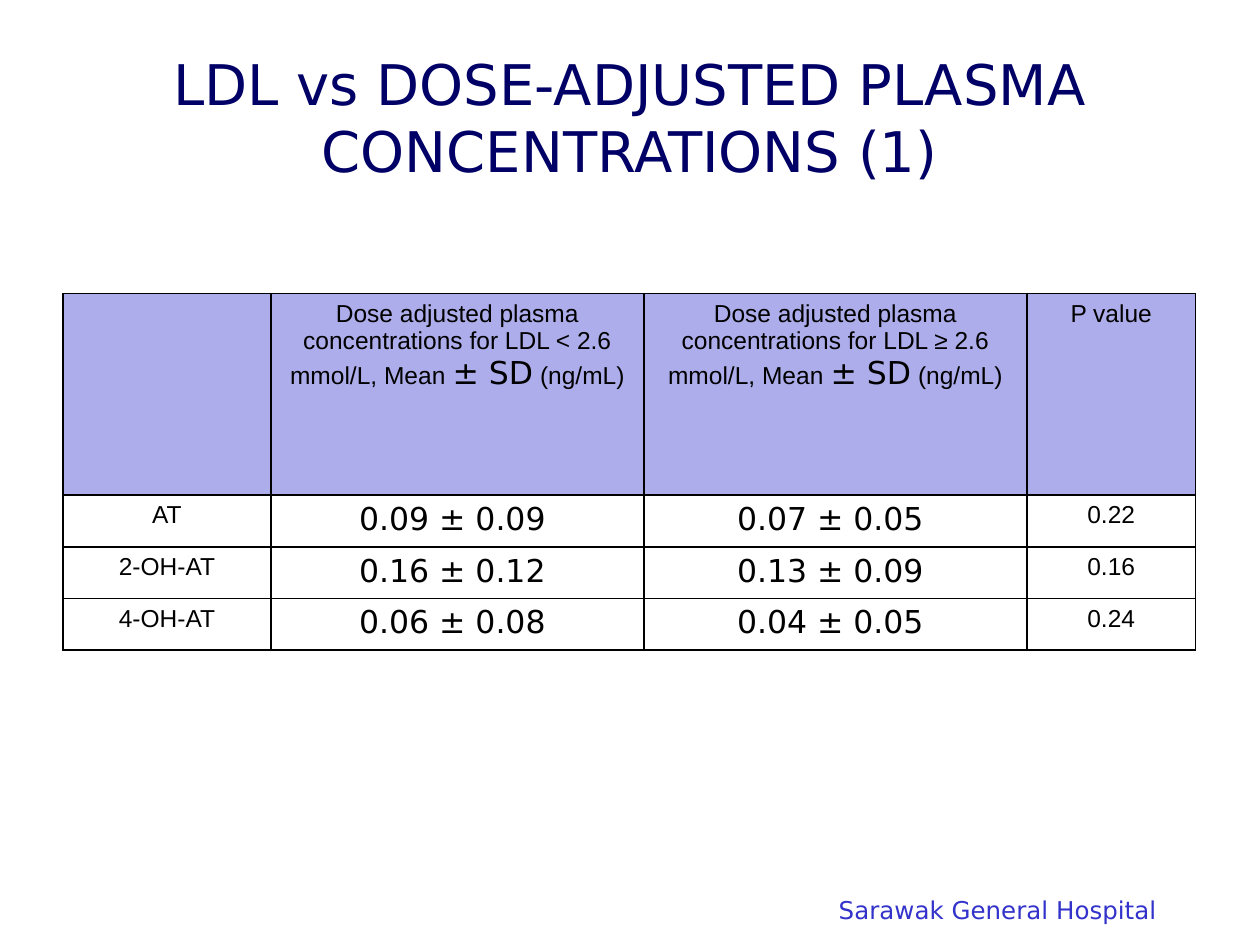
from lxml import etree
from pptx import Presentation
from pptx.dml.color import RGBColor
from pptx.enum.text import MSO_ANCHOR, MSO_AUTO_SIZE, PP_ALIGN
from pptx.oxml.ns import qn
from pptx.util import Inches, Pt

CENTER, RIGHT = PP_ALIGN.CENTER, PP_ALIGN.RIGHT
MIDDLE, NO_FIT = MSO_ANCHOR.MIDDLE, MSO_AUTO_SIZE.NONE

NAVY = RGBColor(0x00, 0x00, 0x66)
BLUE = RGBColor(0x33, 0x33, 0xCC)
LILAC = RGBColor(0xAD, 0xAD, 0xEB)
BLACK = RGBColor(0x00, 0x00, 0x00)
SANS, ARIAL = "DejaVu Sans", "Arial"


def add_text(para, text, font=ARIAL, size=14, color=BLACK, align=CENTER):
    para.alignment = align
    span = para.add_run()
    span.text = text
    span.font.name = font
    span.font.size = Pt(size)
    span.font.color.rgb = color


def add_borders(cell, width=1, color=BLACK):
    properties = cell._tc.get_or_add_tcPr()
    for position, side in enumerate(("lnL", "lnR", "lnT", "lnB")):
        line = etree.Element(qn(f"a:{side}"), w=str(Pt(width)))
        fill = etree.SubElement(line, qn("a:solidFill"))
        etree.SubElement(fill, qn("a:srgbClr"), val=str(color))
        properties.insert(position, line)


deck = Presentation()
deck.slide_width, deck.slide_height = Inches(10), Inches(7.5)
page = deck.slides.add_slide(deck.slide_layouts[5])
margin = int(deck.slide_width * 0.05)
content_width = deck.slide_width - 2 * margin

# Title
title = page.shapes.title
title.left, title.top = margin, int(deck.slide_height * 0.04)
title.width, title.height = content_width, Inches(1.25)
frame = title.text_frame
frame.auto_size, frame.vertical_anchor = NO_FIT, MIDDLE
add_text(frame.paragraphs[0], "LDL vs DOSE-ADJUSTED PLASMA CONCENTRATIONS (1)",
         font=SANS, size=32, color=NAVY)

# Table grid
COLUMNS = [1.65, 2.96, 3.04, 1.34]
ROWS = [1.6] + [0.41] * 3
table = page.shapes.add_table(len(ROWS), len(COLUMNS), margin, Inches(2.33),
                              Inches(sum(COLUMNS)), Inches(sum(ROWS))).table
for column, width in zip(table.columns, COLUMNS):
    column.width = Inches(width)
for row, height in zip(table.rows, ROWS):
    row.height = Inches(height)
for cell in table.iter_cells():
    cell.fill.background()
    add_borders(cell)

# Header row
for cell in table.rows[0].cells:
    cell.fill.solid()
    cell.fill.fore_color.rgb = LILAC
for column, limit in enumerate(("< 2.6", "≥ 2.6"), start=1):
    para = table.cell(0, column).text_frame.paragraphs[0]
    add_text(para, f"Dose adjusted plasma concentrations for LDL {limit} mmol/L, Mean ")
    add_text(para, "± SD", font=SANS, size=18)
    add_text(para, " (ng/mL)")
add_text(table.cell(0, 3).text_frame.paragraphs[0], "P value")

# Measured values
MEASURES = [
    ("AT", "0.09 ± 0.09 ", "0.07 ± 0.05 ", "0.22"),
    ("2-OH-AT", "0.16 ± 0.12 ", "0.13 ± 0.09 ", "0.16"),
    ("4-OH-AT", "0.06 ± 0.08 ", "0.04 ± 0.05 ", "0.24"),
]
for row, values in enumerate(MEASURES, start=1):
    for column, value in enumerate(values):
        style = {"font": SANS, "size": 18} if "±" in value else {}
        add_text(table.cell(row, column).text_frame.paragraphs[0], value, **style)

# Hospital name at the foot
box = page.shapes.add_textbox(Inches(6.65), Inches(7.1), Inches(2.53), Inches(0.23))
frame = box.text_frame
frame.word_wrap = False
frame.margin_left = frame.margin_right = frame.margin_top = frame.margin_bottom = 0
add_text(frame.paragraphs[0], "Sarawak General Hospital",
         font=SANS, color=BLUE, align=RIGHT)

deck.save("out.pptx")
